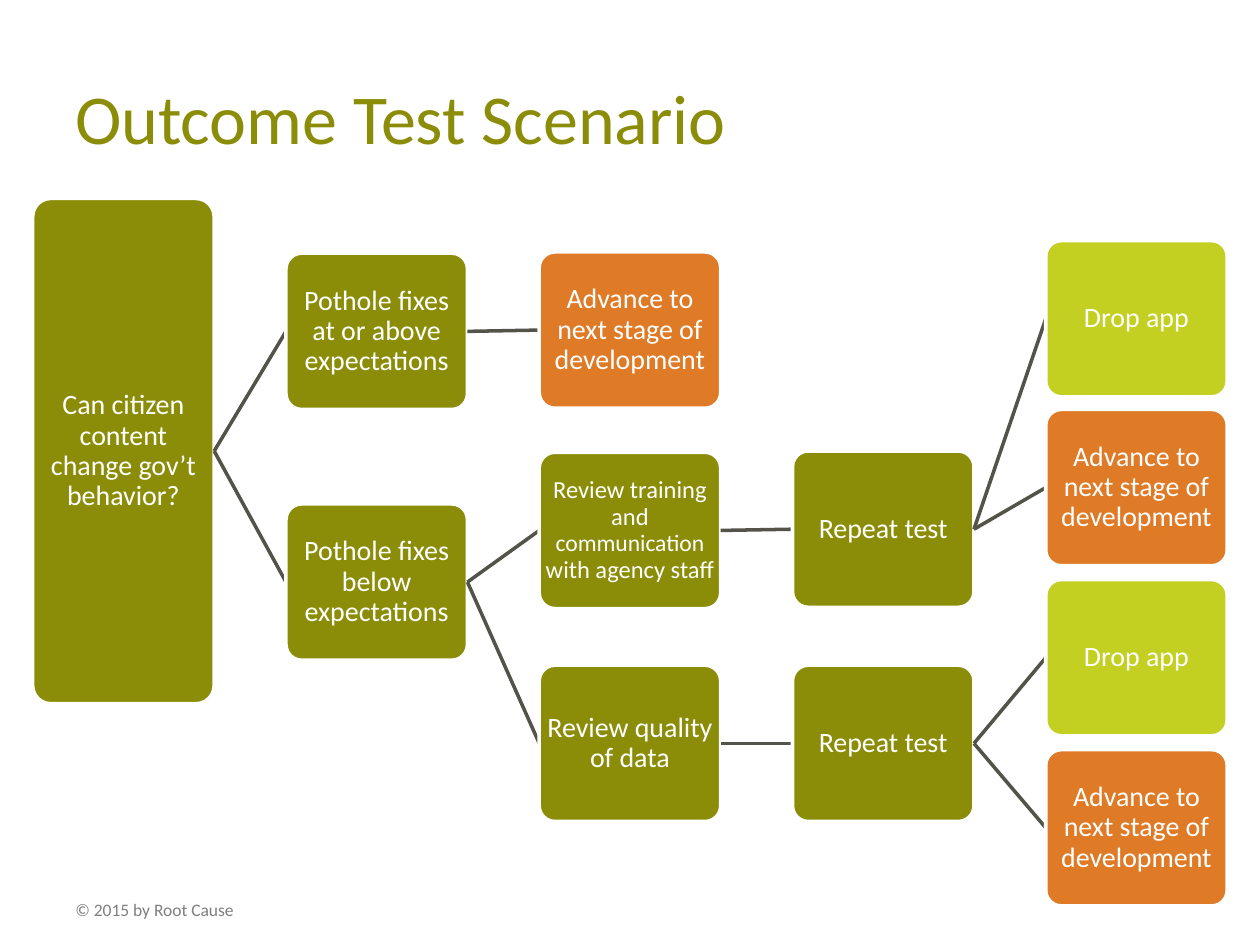
from dataclasses import dataclass

from lxml import etree
from pptx import Presentation
from pptx.dml.color import RGBColor
from pptx.enum.shapes import MSO_CONNECTOR, MSO_SHAPE
from pptx.enum.text import MSO_ANCHOR, PP_ALIGN
from pptx.oxml.ns import qn
from pptx.util import Inches, Pt

OLIVE = RGBColor(0x8B, 0x8D, 0x09)
ORANGE = RGBColor(0xDF, 0x7A, 0x26)
LIME = RGBColor(0xC3, 0xCF, 0x21)
SLATE = RGBColor(0x53, 0x53, 0x49)
GRAY = RGBColor(0x7F, 0x7F, 0x7F)
WHITE = RGBColor(0xFF, 0xFF, 0xFF)
FONT = "Calibri"

LEFT, STEP = 0.26, 2.01
BOX_W, BOX_H, ROOT_H = 1.44, 1.24, 4.01


@dataclass
class Node:
    """A box: its text runs as (text, size), vertical centre and branches."""
    runs: list
    mid: float
    children: tuple = ()
    fill: RGBColor = OLIVE
    height: float = BOX_H


def step(text, mid, *children):
    return Node([(text, 16)], mid, children)


def advance(mid):
    return Node([("Advance to next stage of development", 16)], mid, fill=ORANGE)


def drop(mid):
    return Node([("Drop app", 16)], mid, fill=LIME)


REVIEW_STAFF = Node(
    [("Review training and ", 14), ("communication", 13.5), (" with agency staff", 14)],
    4.21, (step("Repeat test", 4.2, drop(2.53), advance(3.87)),))
REVIEW_DATA = step("Review quality of data", 5.9,
                   step("Repeat test", 5.9, drop(5.22), advance(6.57)))
ROOT = Node(
    [("Can citizen content change gov’t behavior?", 16)], 3.58,
    (step("Pothole fixes at or above expectations", 2.63, advance(2.62)),
     step("Pothole fixes below expectations", 4.62, REVIEW_STAFF, REVIEW_DATA)),
    height=ROOT_H)


def add_run(p, text, size, color):
    r = p.add_run()
    r.text = text
    r.font.name, r.font.size = FONT, Pt(size)
    r.font.color.rgb = color


def add_label(s, text, x, y, w, h, size, color):
    tf = s.shapes.add_textbox(Inches(x), Inches(y), Inches(w), Inches(h)).text_frame
    tf.word_wrap = True
    tf.vertical_anchor = MSO_ANCHOR.MIDDLE
    add_run(tf.paragraphs[0], text, size, color)


def add_box(s, node, x):
    sp = s.shapes.add_shape(MSO_SHAPE.ROUNDED_RECTANGLE, Inches(x),
                            Inches(node.mid - node.height / 2),
                            Inches(BOX_W), Inches(node.height))
    sp.adjustments[0] = 0.1
    sp.shadow.inherit = False
    sp.fill.solid()
    sp.fill.fore_color.rgb = node.fill
    sp.line.color.rgb = WHITE
    sp.line.width = Pt(2)
    tf = sp.text_frame
    tf.word_wrap = True
    tf.vertical_anchor = MSO_ANCHOR.MIDDLE
    # The rounded corners already inset the text a little.
    tf.margin_left = tf.margin_right = tf.margin_top = tf.margin_bottom = Inches(0.01)
    p = tf.paragraphs[0]
    p.alignment = PP_ALIGN.CENTER
    p.line_spacing = 0.9
    for text, size in node.runs:
        add_run(p, text, size, WHITE)


def add_link(s, x1, y1, x2, y2):
    line = s.shapes.add_connector(MSO_CONNECTOR.STRAIGHT, Inches(x1), Inches(y1),
                                  Inches(x2), Inches(y2))
    line.line.color.rgb = SLATE
    line.line.width = Pt(2)
    etree.SubElement(line._element.spPr, qn("a:effectLst"))


def add_tree(s, node, level=0):
    """Draw a node, then each branch: its link first, so the child covers the end."""
    x = LEFT + level * STEP
    add_box(s, node, x)
    for child in node.children:
        add_link(s, x + BOX_W, node.mid, x + STEP, child.mid)
        add_tree(s, child, level + 1)


def main():
    prs = Presentation()
    prs.slide_width, prs.slide_height = Inches(10), Inches(7.5)
    s = prs.slides.add_slide(prs.slide_layouts[6])
    add_label(s, "© 2015 by Root Cause", 0.5, 7.08, 1.67, 0.27, 10, GRAY)
    add_label(s, "Outcome Test Scenario", 0.5, 0.3, 9, 1.25, 40, OLIVE)
    add_tree(s, ROOT)
    prs.save("out.pptx")


if __name__ == "__main__":
    main()
